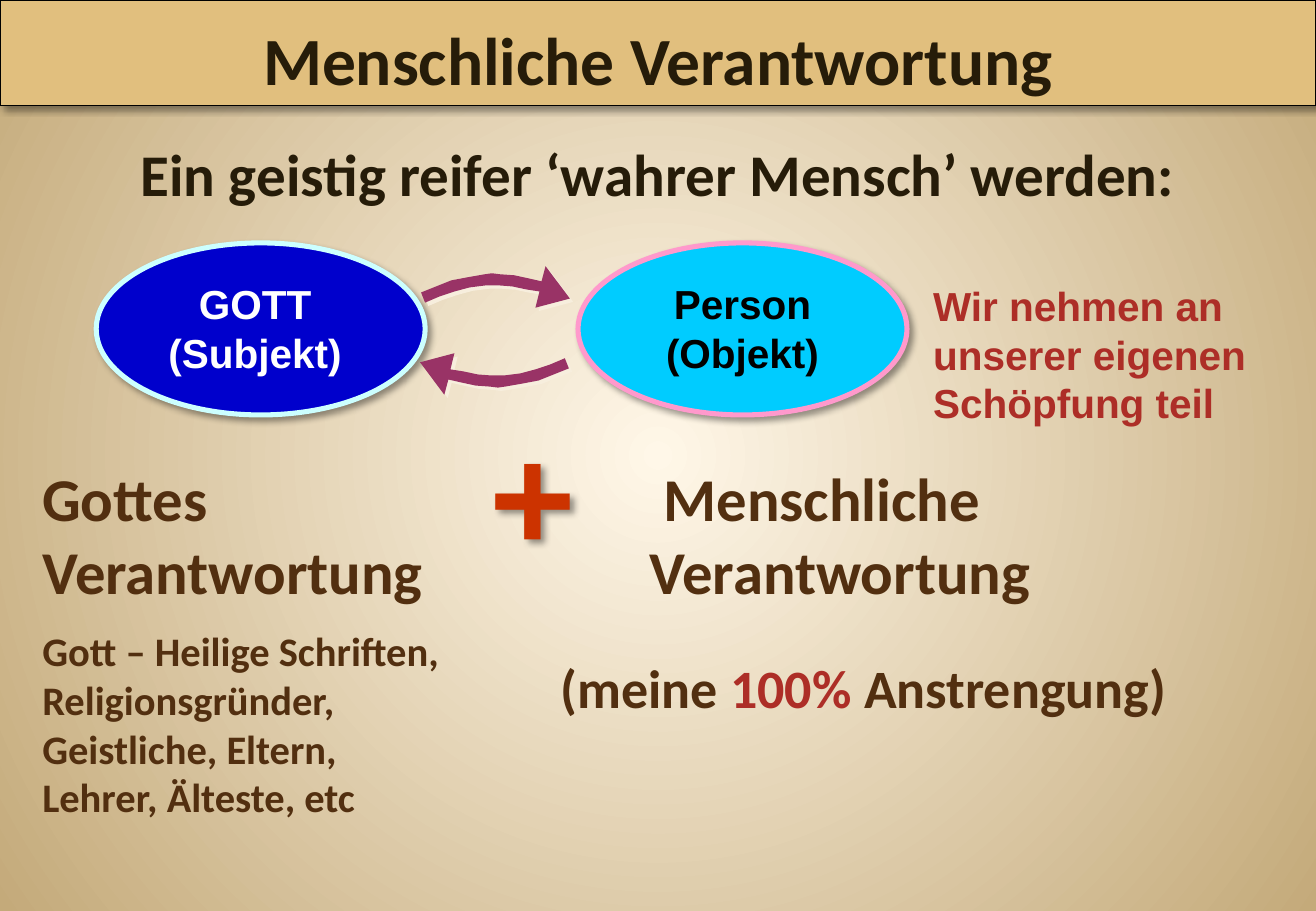
from lxml import etree
from pptx import Presentation
from pptx.dml.color import RGBColor
from pptx.enum.shapes import MSO_SHAPE
from pptx.enum.text import MSO_ANCHOR, PP_ALIGN
from pptx.oxml.ns import qn
from pptx.util import Pt

OVAL, RECT = MSO_SHAPE.OVAL, MSO_SHAPE.RECTANGLE
LEFT, MID = PP_ALIGN.LEFT, PP_ALIGN.CENTER
TOP, BOTTOM = MSO_ANCHOR.TOP, MSO_ANCHOR.BOTTOM
PX = 7620
WIDE, HIGH = 1300, 900

THEME = {
    "color": {
        "glow": "FFF7E8", "sand": "C4AA7A", "gold": "E1BF7E", "ink": "261C09",
        "brown": "522F10", "red": "AD2E27", "plus": "CC3300", "plum": "993366",
        "blue": "0000CC", "ice": "CCFFFF", "sky": "00CCFF", "pink": "FF99CC",
        "white": "FFFFFF", "black": "000000", "cream": "F7EEDD",
    },
    "font": {
        "title": {"name": "Calibri", "size": Pt(40), "bold": True},
        "lead": {"name": "Calibri", "size": Pt(35), "bold": True},
        "head": {"name": "Calibri", "size": Pt(36), "bold": True},
        "share": {"name": "Calibri", "size": Pt(32), "bold": True},
        "list": {"name": "Calibri", "size": Pt(24), "bold": True},
        "label": {"name": "Arial", "size": Pt(24), "bold": True},
        "plus": {"name": "Arial", "size": Pt(88), "bold": True},
    },
    "shade": {
        "soft": ("black", 40, 4, 3),
        "edge": ("cream", 100, 0, 2.8),
    },
}
TINT = {name: RGBColor.from_string(code) for name, code in THEME["color"].items()}


def cast(shape, kind):
    tint, alpha, blur, dist = THEME["shade"][kind]
    shape.shadow.inherit = False
    effects = shape._element.spPr.find(qn("a:effectLst"))
    outer = etree.SubElement(effects, qn("a:outerShdw"), blurRad=str(Pt(blur)),
                             dist=str(Pt(dist)), dir="2700000", algn="tl", rotWithShape="0")
    color = etree.SubElement(outer, qn("a:srgbClr"), val=THEME["color"][tint])
    etree.SubElement(color, qn("a:alpha"), val=str(alpha * 1000))


def write(shape, align, anchor, lines):
    frame = shape.text_frame
    frame.word_wrap = True
    frame.vertical_anchor = anchor
    for row, parts in enumerate(lines):
        para = frame.add_paragraph() if row else frame.paragraphs[0]
        para.alignment = align
        for text, style, tint in parts:
            run = para.add_run()
            run.text = text
            run.font.color.rgb = TINT[tint]
            for key, value in THEME["font"][style].items():
                setattr(run.font, key, value)
            if row and style == "list":
                para.space_before = Pt(12)


deck = Presentation()
deck.slide_width, deck.slide_height = WIDE * PX, HIGH * PX
slide = deck.slides.add_slide(deck.slide_layouts[6])
shapes = slide.shapes

back = slide.background.fill
back.gradient()
for stop, tint in zip(back.gradient_stops, ("glow", "sand")):
    stop.color.rgb = TINT[tint]
grad = slide.element.find(".//" + qn("a:gradFill"))
grad.remove(grad.find(qn("a:lin")))
round_path = etree.SubElement(grad, qn("a:path"), path="circle")
etree.SubElement(round_path, qn("a:fillToRect"), l="50000", t="50000", r="50000", b="50000")

forms = {}
for name, form, box, fill, line, width in (
    ("god", OVAL, (95, 240, 325, 170), "blue", "ice", 3),
    ("person", OVAL, (571, 240, 325, 170), "sky", "pink", 3),
    ("title", RECT, (0, 0, WIDE, 104), "gold", "black", 0.75),
):
    shape = shapes.add_shape(form, *(n * PX for n in box))
    shape.fill.solid()
    shape.fill.fore_color.rgb = TINT[fill]
    shape.line.color.rgb = TINT[line]
    shape.line.width = Pt(width)
    cast(shape, "soft")
    forms[name] = shape
write(forms["title"], MID, BOTTOM, [[("Menschliche Verantwortung", "title", "ink")]])

ARROW = [
    (533, 288), (520, 286), (506, 283), (493, 282), (480, 282), (464, 284),
    (449, 288), (434, 293), (420, 299), (416, 289), (431, 283), (446, 277),
    (462, 274), (479, 271), (486, 270), (494, 271), (508, 272), (522, 275),
    (535, 278), (539, 263), (563, 295), (529, 304),
]
for points in (ARROW, [(978 - x, 653 - y) for x, y in ARROW]):
    pen = shapes.build_freeform(*points[0], scale=PX)
    pen.add_line_segments(points[1:], close=True)
    arrow = pen.convert_to_shape()
    arrow.fill.solid()
    arrow.fill.fore_color.rgb = TINT["plum"]
    arrow.line.fill.background()
    cast(arrow, "edge")

notes = {}
for name, box, align, lines in (
    ("lead", (0, 130, WIDE, 83), MID,
     [[("Ein geistig reifer ‘wahrer Mensch’ werden:", "lead", "ink")]]),
    ("god", (138, 270, 228, 109), MID,
     [[("GOTT", "label", "white")], [("(Subjekt)", "label", "white")]]),
    ("person", (614, 270, 239, 109), MID,
     [[("Person", "label", "black")], [("(Objekt)", "label", "black")]]),
    ("duty", (30, 449, 427, 376), LEFT,
     [[("Gottes Verantwortung", "head", "brown")],
      [("Gott – Heilige Schriften, Religionsgründer, Geistliche, Eltern, "
        "Lehrer, Älteste, etc", "list", "brown")]]),
    ("human", (630, 449, 430, 157), LEFT,
     [[(" Menschliche Verantwortung", "head", "brown")]]),
    ("join", (910, 272, 368, 157), LEFT,
     [[("Wir nehmen an unserer eigenen Schöpfung teil", "label", "red")]]),
    ("plus", (472, 392, 108, 188), LEFT, [[("+", "plus", "plus")]]),
    ("share", (523, 641, 660, 77), MID,
     [[("(meine ", "share", "brown"), ("100% ", "share", "red"),
       ("Anstrengung)", "share", "brown")]]),
):
    notes[name] = shapes.add_textbox(*(n * PX for n in box))
    write(notes[name], align, TOP, lines)
cast(notes["plus"], "soft")

deck.save("out.pptx")
